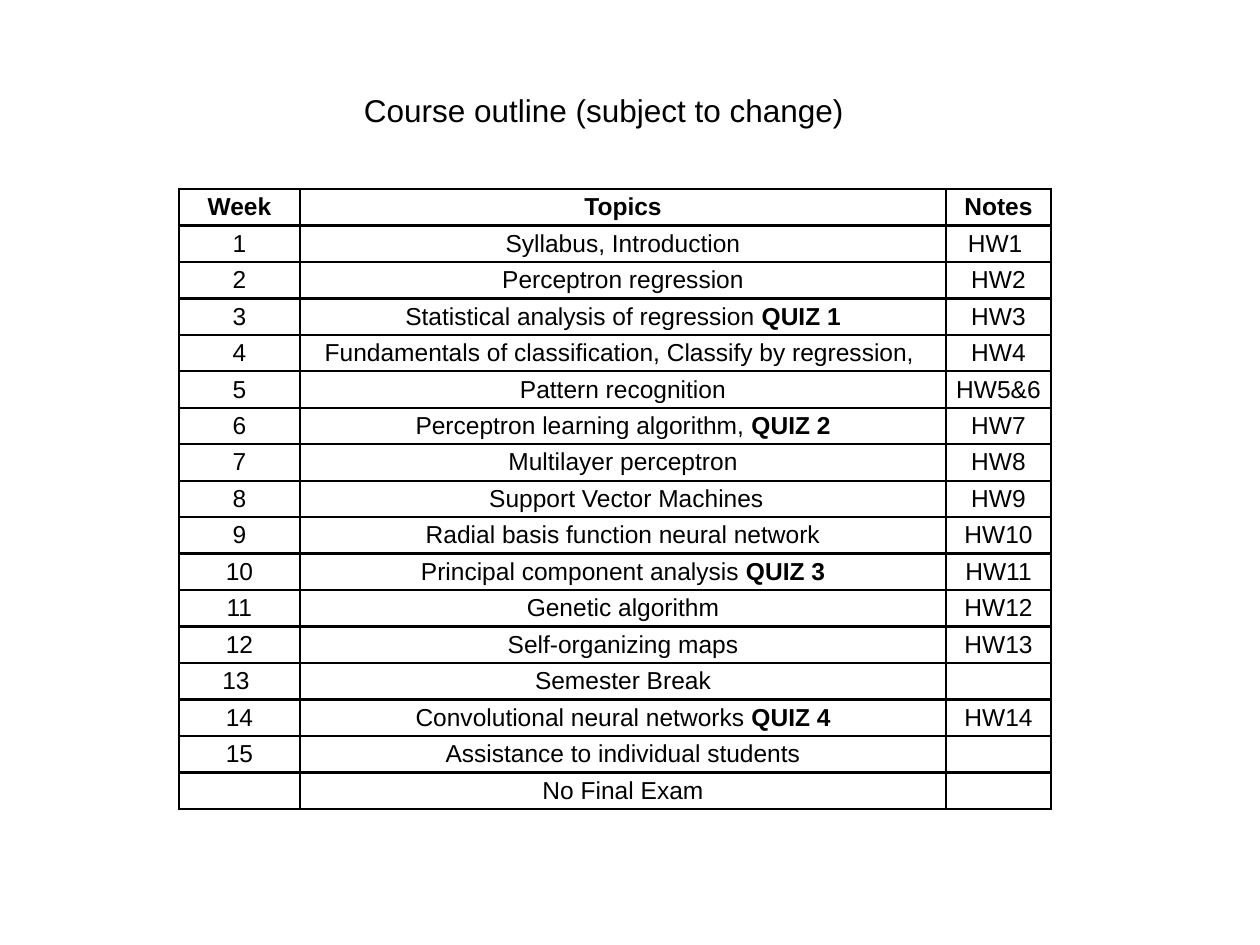
from lxml import etree
from pptx import Presentation
from pptx.dml.color import RGBColor
from pptx.enum.text import MSO_ANCHOR, MSO_AUTO_SIZE, PP_ALIGN
from pptx.oxml.ns import qn
from pptx.util import Inches, Pt

CENTER = PP_ALIGN.CENTER
MIDDLE = MSO_ANCHOR.MIDDLE
GROW = MSO_AUTO_SIZE.SHAPE_TO_FIT_TEXT

COLUMN_WIDTHS = (0.96, 5.13, 0.83)
# Left, right, top and bottom line widths in points, per column
COLUMN_BORDERS = ((1.5, 1, 1.5, 1.5), (1, 1, 1.5, 1.5), (1, 1.5, 1.5, 1.5))

# Week, topic, notes, quiz
WEEKS = [
    ("1", "Syllabus, Introduction", "HW1 ", ""),
    ("2", "Perceptron regression", "HW2", ""),
    ("3", "Statistical analysis of regression ", "HW3", "QUIZ 1"),
    ("4", "Fundamentals of classification, Classify by regression, ", "HW4", ""),
    ("5", "Pattern recognition", "HW5&6", ""),
    ("6", "Perceptron learning algorithm, ", "HW7", "QUIZ 2"),
    ("7", "Multilayer perceptron", "HW8", ""),
    ("8", " Support Vector Machines", "HW9", ""),
    ("9", "Radial basis function neural network", "HW10", ""),
    ("10", "Principal component analysis ", "HW11", "QUIZ 3"),
    ("11", "Genetic algorithm", "HW12", ""),
    ("12", "Self-organizing maps", "HW13", ""),
    ("13 ", "Semester Break", "", ""),
    ("14", "Convolutional neural networks ", "HW14", "QUIZ 4"),
    ("15", "Assistance to individual students", "", ""),
    ("", "No Final Exam", "", ""),
]


def rgb(hex_color):
    return RGBColor.from_string(hex_color)


class OutlineSlide:
    """Holds the slide and its type style, and draws its elements."""

    font_name = "Arial"
    ink = "000000"
    title_size = 18
    table_size = 14

    def __init__(self, slide):
        self.slide = slide

    def style_run(self, run, size, bold=False):
        run.font.name = self.font_name
        run.font.size = Pt(size)
        run.font.bold = bold
        run.font.color.rgb = rgb(self.ink)

    def title(self, text, left, top, width, height):
        box = self.slide.shapes.add_textbox(
            Inches(left), Inches(top), Inches(width), Inches(height))
        frame = box.text_frame
        frame.word_wrap = True
        frame.auto_size = GROW
        frame.text = text
        self.style_run(frame.paragraphs[0].runs[0], self.title_size)

    def borders(self, cell, widths):
        properties = cell._tc.get_or_add_tcPr()
        for side, width in zip("LRTB", widths):
            line = etree.SubElement(properties, qn(f"a:ln{side}"), w=str(Pt(width)))
            fill = etree.SubElement(line, qn("a:solidFill"))
            etree.SubElement(fill, qn("a:srgbClr"), val=self.ink)

    def cell(self, cell, text, widths, bold=False, quiz=""):
        cell.margin_left = cell.margin_right = Inches(0.02)
        cell.margin_top = cell.margin_bottom = Inches(0.01)
        cell.vertical_anchor = MIDDLE
        self.borders(cell, widths)
        cell.fill.background()
        cell.text_frame.text = text
        paragraph = cell.text_frame.paragraphs[0]
        paragraph.alignment = CENTER
        for run in paragraph.runs:
            self.style_run(run, self.table_size, bold)
        if quiz:
            quiz_run = paragraph.add_run()
            quiz_run.text = quiz
            self.style_run(quiz_run, self.table_size, True)
        if not text:
            # Keeps an empty cell from stretching its row
            etree.SubElement(paragraph._p, qn("a:endParaRPr"),
                             sz=str(self.table_size * 100))

    def schedule(self, headings, weeks, left, top, height):
        row_count = len(weeks) + 1
        table = self.slide.shapes.add_table(
            row_count, len(headings), Inches(left), Inches(top),
            Inches(sum(COLUMN_WIDTHS)), Inches(height)).table
        table.first_row = False
        table.horz_banding = False
        for column, width in zip(table.columns, COLUMN_WIDTHS):
            column.width = Inches(width)
        for row in table.rows:
            row.height = Inches(height / row_count)
        for c, heading in enumerate(headings):
            self.cell(table.cell(0, c), heading, COLUMN_BORDERS[c], bold=True)
        for r, (week, topic, notes, quiz) in enumerate(weeks, start=1):
            for c, (text, extra) in enumerate(((week, ""), (topic, quiz), (notes, ""))):
                self.cell(table.cell(r, c), text, COLUMN_BORDERS[c], quiz=extra)


def main():
    presentation = Presentation()
    presentation.slide_width = Inches(10)
    presentation.slide_height = Inches(7.5)
    blank = presentation.slide_layouts[6]
    outline = OutlineSlide(presentation.slides.add_slide(blank))
    outline.title("Course outline (subject to change)", 2.79, 0.67, 4.62, 0.4)
    outline.schedule(("Week", "Topics", "Notes"), WEEKS, 1.42, 1.5, 4.92)
    presentation.save("out.pptx")


if __name__ == "__main__":
    main()
